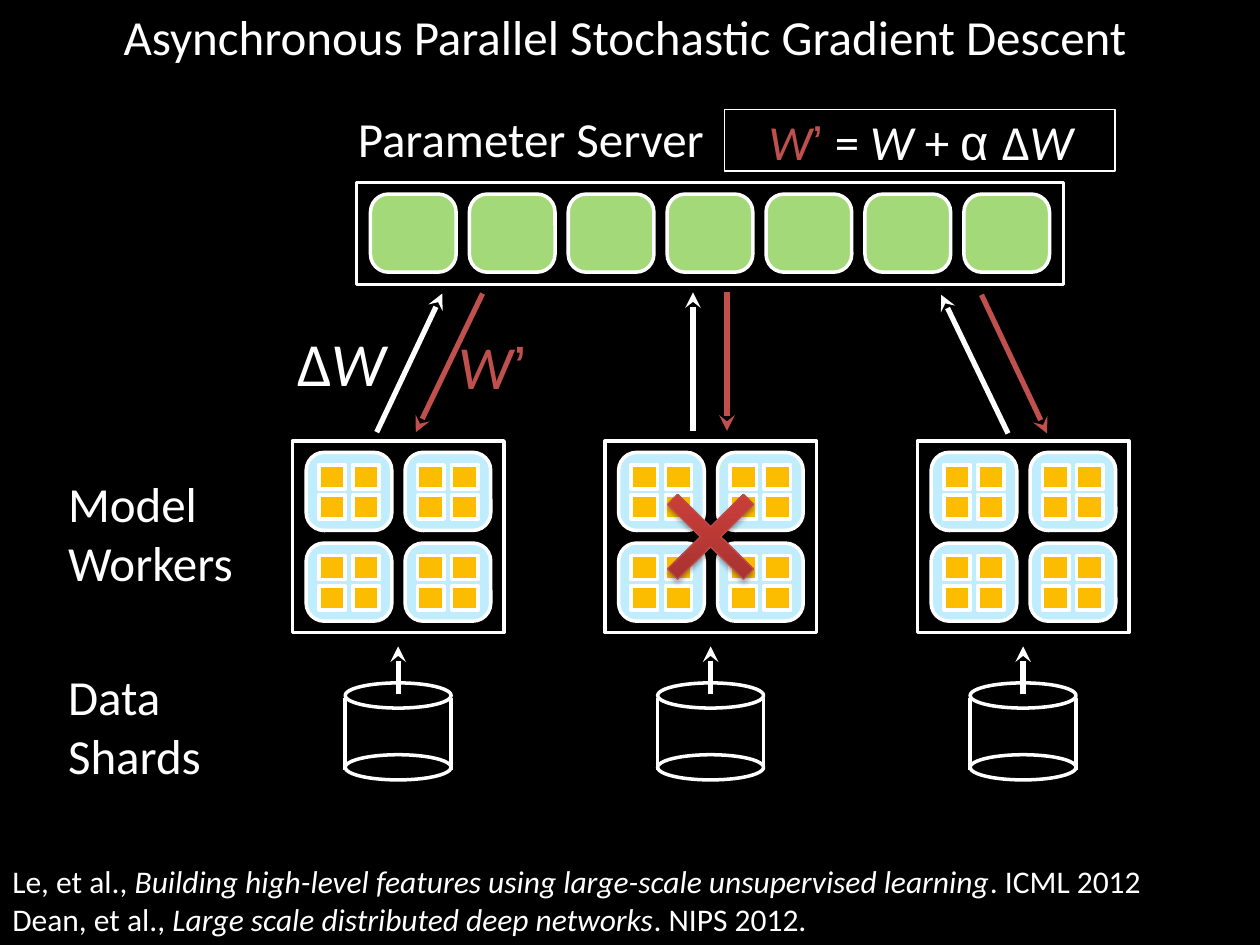
"""Builds a slide on asynchronous parallel stochastic gradient descent."""
from dataclasses import dataclass
from itertools import product

from lxml import etree
from pptx import Presentation
from pptx.dml.color import RGBColor
from pptx.enum.shapes import MSO_CONNECTOR, MSO_SHAPE
from pptx.enum.text import MSO_ANCHOR, PP_ALIGN
from pptx.oxml.ns import qn
from pptx.util import Inches, Pt

RECT, ROUNDED = MSO_SHAPE.RECTANGLE, MSO_SHAPE.ROUNDED_RECTANGLE
OVAL, MULTIPLY = MSO_SHAPE.OVAL, MSO_SHAPE.MATH_MULTIPLY
STRAIGHT = MSO_CONNECTOR.STRAIGHT
TOP, MIDDLE = MSO_ANCHOR.TOP, MSO_ANCHOR.MIDDLE
LEFT, CENTER = PP_ALIGN.LEFT, PP_ALIGN.CENTER

BLACK, WHITE, RED = "000000", "FFFFFF", "C0504D"
GREEN, ICE, AMBER = "A3D979", "C0EDFE", "FCBD00"
CROSS_DARK, CROSS_LIGHT, CROSS_EDGE = "9C2F2D", "CB3E3A", "BF4C48"

CELL_W, CELL_H, FRAME_PAD = 0.68, 0.62, 0.11
SERVER_X, SERVER_Y, SERVER_W, SERVER_H = 2.83, 1.45, 5.61, 0.81
SERVER_CELLS = 7
CELL_PITCH_X = (SERVER_W - 2 * FRAME_PAD - CELL_W) / (SERVER_CELLS - 1)
CELL_PITCH_Y = 0.72
WORKER_X, WORKER_Y, WORKER_W, WORKER_H = 2.32, 3.5, 1.68, 1.52
WORKER_PITCH, WORKERS = 2.48, 3
UNIT_W, UNIT_H, UNIT_PAD = 0.21, 0.19, 0.1
UNIT_PITCH_X, UNIT_PITCH_Y = 0.27, 0.24
SHARD_W, SHARD_RIM = 0.84, 0.2


@dataclass
class Box:
    """A rectangle in inches."""
    x: float
    y: float
    w: float
    h: float

    def lengths(self) -> list:
        """Return left, top, width and height as lengths."""
        return [Inches(v) for v in (self.x, self.y, self.w, self.h)]


@dataclass
class Words:
    """A run of text with its look."""
    text: str
    color: str = WHITE
    italic: bool = False
    font: str = "Calibri"


@dataclass
class Label:
    """A block of text, one list of runs to a paragraph."""
    box: Box
    lines: list
    size: float = 28
    inset: bool = False
    wrap: bool = True
    anchor: int = MIDDLE
    align: int = LEFT


@dataclass
class Arrow:
    """An arrow from its start to its tip."""
    start: tuple
    tip: tuple
    color: str = WHITE


LABELS = [
    Label(Box(0, 6.79, 10.2, 0.71), [
        [Words("Le, et al., "),
         Words("Building high-level features using large-scale unsupervised learning", italic=True),
         Words(". ICML 2012")],
        [Words("Dean, et al., "),
         Words("Large scale distributed deep networks", italic=True),
         Words(". NIPS 2012.")]], size=18, inset=True, anchor=TOP),
    Label(Box(0.81, 0, 8.3, 0.57),
          [[Words("Asynchronous Parallel Stochastic Gradient Descent")]],
          inset=True, wrap=False, anchor=TOP, align=CENTER),
    Label(Box(2.84, 0.86, 2.8, 0.47), [[Words("Parameter Server")]], wrap=False),
    Label(Box(0.54, 3.8, 1.7, 0.85), [[Words("Model")], [Words("Workers")]]),
    Label(Box(0.54, 5.29, 1.07, 0.94), [[Words("Data")], [Words("Shards")]], wrap=False),
    Label(Box(2.36, 2.63, 0.87, 0.49), [[Words("∆"), Words("W", italic=True)]], size=35),
    Label(Box(3.64, 2.66, 0.87, 0.47),
          [[Words("W", RED, True), Words("’", RED, font="Arial")]], size=35),
]
UPDATE_RULE = [
    Words("W", RED, True), Words("’ ", RED, font="Arial"), Words("= "),
    Words("W ", italic=True), Words("+ "), Words("α ", font="Arial"),
    Words("∆"), Words("W", italic=True)]
EXCHANGES = [
    Arrow((2.99, 3.43), (3.51, 2.33)), Arrow((3.83, 2.33), (3.3, 3.43), RED),
    Arrow((8, 3.44), (7.47, 2.34)), Arrow((7.79, 2.34), (8.31, 3.44), RED),
    Arrow((5.5, 3.42), (5.5, 2.32)), Arrow((5.77, 2.32), (5.77, 3.42), RED),
]


def rgb(color: str) -> RGBColor:
    """Turn a hex string into a colour."""
    return RGBColor.from_string(color)


def add_shadow(effects) -> None:
    """Put a soft downward shadow into an effect list."""
    shadow = etree.SubElement(effects, qn("a:outerShdw"), blurRad=str(Pt(3.1)),
                              dist=str(Pt(1.8)), dir="5400000", rotWithShape="0")
    tone = etree.SubElement(shadow, qn("a:srgbClr"), val=BLACK)
    etree.SubElement(tone, qn("a:alpha"), val="35000")


def add_block(slide, kind, box: Box, fill: str = "", width: float = 2):
    """Draw a white-edged shape, hollow unless a fill is given."""
    block = slide.shapes.add_shape(kind, *box.lengths())
    block.shadow.inherit = False
    block.line.color.rgb = rgb(WHITE)
    block.line.width = Pt(width)
    if fill:
        block.fill.solid()
        block.fill.fore_color.rgb = rgb(fill)
    else:
        block.fill.background()
    return block


def add_stroke(slide, start: tuple, end: tuple, color: str, width: float):
    """Draw a straight line and return it with its effect list."""
    stroke = slide.shapes.add_connector(STRAIGHT, *[Inches(v) for v in start + end])
    stroke.line.color.rgb = rgb(color)
    stroke.line.width = Pt(width)
    return stroke, etree.SubElement(stroke._element.spPr, qn("a:effectLst"))


def add_arrow(slide, arrow: Arrow) -> None:
    """Draw an arrow, with a shadow when it is red."""
    stroke, effects = add_stroke(slide, arrow.start, arrow.tip, arrow.color, 3)
    etree.SubElement(stroke.line._get_or_add_ln(), qn("a:tailEnd"), type="stealth")
    if arrow.color == RED:
        add_shadow(effects)


def add_runs(paragraph, runs: list, size: float) -> None:
    """Fill a paragraph run by run."""
    for words in runs:
        run = paragraph.add_run()
        run.text = words.text
        run.font.name = words.font
        run.font.size = Pt(size)
        run.font.italic = words.italic
        run.font.color.rgb = rgb(words.color)


def clear_insets(frame) -> None:
    """Remove the inner margins of a text frame."""
    frame.margin_left = frame.margin_top = 0
    frame.margin_right = frame.margin_bottom = 0


def add_label(slide, label: Label) -> None:
    """Write a text block."""
    frame = slide.shapes.add_textbox(*label.box.lengths()).text_frame
    frame.word_wrap = label.wrap
    frame.vertical_anchor = label.anchor
    if not label.inset:
        clear_insets(frame)
    for index, runs in enumerate(label.lines):
        paragraph = frame.add_paragraph() if index else frame.paragraphs[0]
        paragraph.alignment = label.align
        add_runs(paragraph, runs, label.size)


def add_cell(slide, x: float, y: float, fill: str) -> None:
    """Draw one rounded cell."""
    cell = add_block(slide, ROUNDED, Box(x, y, CELL_W, CELL_H), fill)
    cell.adjustments[0] = 0.23


def add_worker(slide, left: float) -> None:
    """Draw a model worker with its four machines and their units."""
    for row, column in product(range(2), repeat=2):
        x = left + FRAME_PAD + column * CELL_PITCH_X
        y = WORKER_Y + 0.09 + row * CELL_PITCH_Y
        add_cell(slide, x, y, ICE)
        for unit_row, unit_column in product(range(2), repeat=2):
            add_block(slide, RECT, Box(x + UNIT_PAD + unit_column * UNIT_PITCH_X,
                                       y + UNIT_PAD + unit_row * UNIT_PITCH_Y,
                                       UNIT_W, UNIT_H), AMBER)
    add_block(slide, RECT, Box(left, WORKER_Y, WORKER_W, WORKER_H))


def add_shard(slide, center: float) -> None:
    """Draw a data shard and the arrow that feeds its worker."""
    left = center - SHARD_W / 2
    for rim_y in (5.99, 5.42):
        add_block(slide, OVAL, Box(left, rim_y, SHARD_W, SHARD_RIM))
    for side in (left, left + SHARD_W):
        add_stroke(slide, (side, 5.54), (side, 6.11), WHITE, 2)
    add_arrow(slide, Arrow((center, 5.51), (center, 5.13)))


def add_server(slide) -> None:
    """Draw the parameter server and its update rule."""
    add_block(slide, RECT, Box(SERVER_X, SERVER_Y, SERVER_W, SERVER_H))
    for index in range(SERVER_CELLS):
        add_cell(slide, SERVER_X + FRAME_PAD + index * CELL_PITCH_X, SERVER_Y + 0.09, GREEN)
    frame = add_block(slide, RECT, Box(5.75, 0.87, 3.1, 0.49), width=1).text_frame
    clear_insets(frame)
    frame.margin_left = Inches(0.35)
    frame.vertical_anchor = MIDDLE
    frame.paragraphs[0].alignment = LEFT
    add_runs(frame.paragraphs[0], UPDATE_RULE, 28)


def add_failure_cross(slide) -> None:
    """Draw the cross over the failed worker."""
    cross = add_block(slide, MULTIPLY, Box(5.06, 3.69, 1.16, 1.14), width=0.75)
    cross.adjustments[0] = 0.1
    cross.line.color.rgb = rgb(CROSS_EDGE)
    cross.fill.gradient()
    cross.fill.gradient_angle = 90
    stops = zip(cross.fill.gradient_stops, (CROSS_DARK, CROSS_LIGHT), (0, 0.8))
    for stop, color, position in stops:
        stop.color.rgb = rgb(color)
        stop.position = position
    add_shadow(cross._element.spPr.find(qn("a:effectLst")))


def main() -> None:
    """Build and save the slide."""
    deck = Presentation()
    deck.slide_width, deck.slide_height = Inches(10), Inches(7.5)
    slide = deck.slides.add_slide(deck.slide_layouts[6])
    slide.background.fill.solid()
    slide.background.fill.fore_color.rgb = rgb(BLACK)
    for index in range(WORKERS):
        left = WORKER_X + index * WORKER_PITCH
        add_worker(slide, left)
        add_shard(slide, left + WORKER_W / 2)
    add_server(slide)
    for arrow in EXCHANGES:
        add_arrow(slide, arrow)
    for label in LABELS:
        add_label(slide, label)
    add_failure_cross(slide)
    deck.save("out.pptx")


if __name__ == "__main__":
    main()
